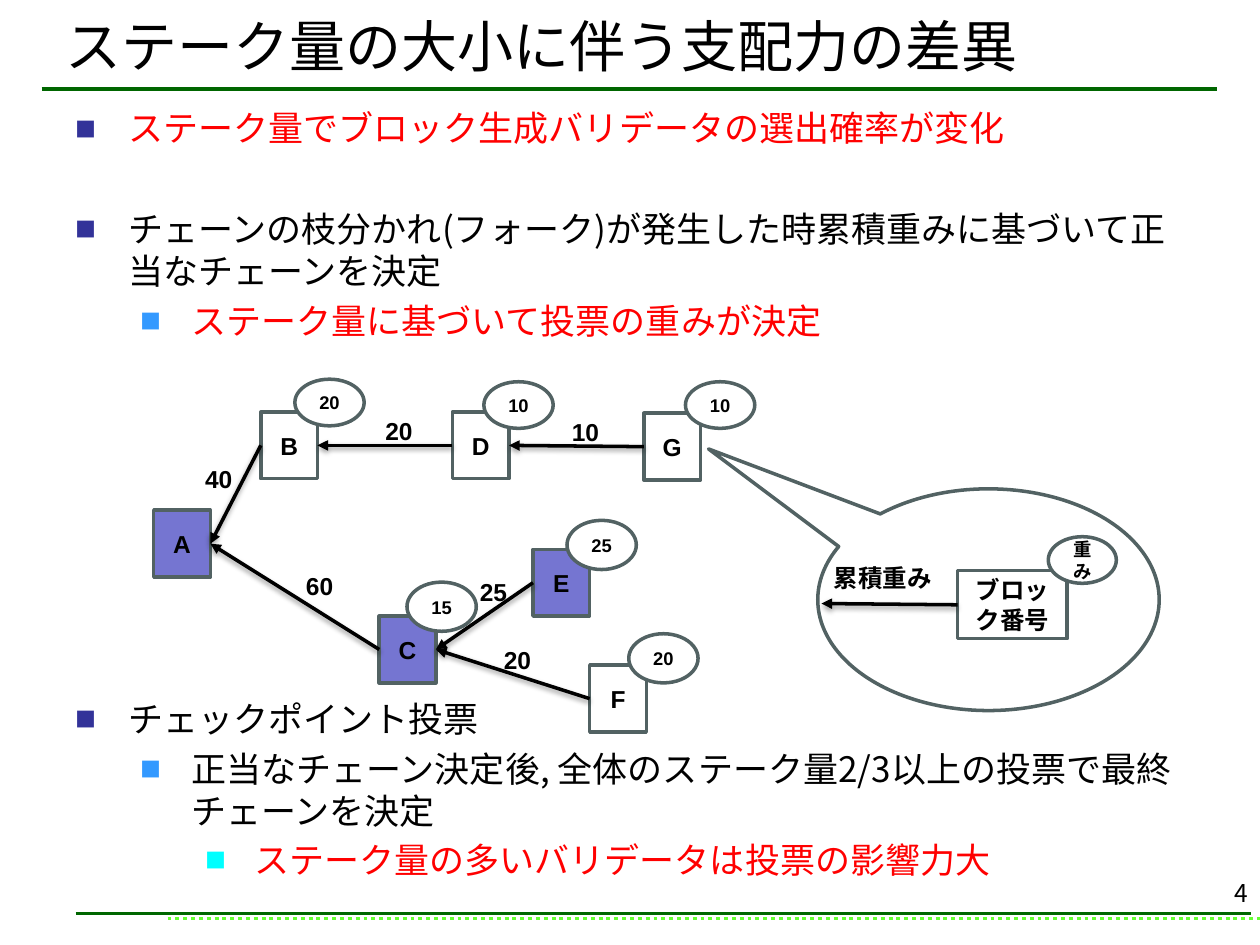
from typing import NamedTuple, Optional

from lxml import etree
from pptx import Presentation
from pptx.dml.color import RGBColor
from pptx.enum.dml import MSO_LINE
from pptx.enum.shapes import MSO_CONNECTOR, MSO_SHAPE
from pptx.enum.text import MSO_ANCHOR, PP_ALIGN
from pptx.oxml.ns import qn
from pptx.util import Inches, Pt

STRAIGHT = MSO_CONNECTOR.STRAIGHT
RECTANGLE, ELLIPSE = MSO_SHAPE.RECTANGLE, MSO_SHAPE.OVAL
CALLOUT = MSO_SHAPE.OVAL_CALLOUT
TOP, MIDDLE = MSO_ANCHOR.TOP, MSO_ANCHOR.MIDDLE
LEFT, CENTER, RIGHT = PP_ALIGN.LEFT, PP_ALIGN.CENTER, PP_ALIGN.RIGHT
DOTTED = MSO_LINE.ROUND_DOT
LEFT_SIDE, RIGHT_SIDE = 1, 3

BLACK = RGBColor(0x00, 0x00, 0x00)
WHITE = RGBColor(0xFF, 0xFF, 0xFF)
RED = RGBColor(0xFF, 0x00, 0x00)
PURPLE = RGBColor(0x75, 0x75, 0xD1)
OUTLINE = RGBColor(0x52, 0x62, 0x63)
GREEN = RGBColor(0x00, 0x66, 0x00)
LIME = RGBColor(0x66, 0xFF, 0x33)

LATIN, JAPANESE = "Arial", "Noto Sans CJK JP"
BODY_LINE = 24
BLANK_TOP, BLANK_SUB = BODY_LINE + 4.8, BODY_LINE + 4.4

presentation = Presentation()
presentation.slide_width, presentation.slide_height = Inches(10), Inches(7.5)
slide = presentation.slides.add_slide(presentation.slide_layouts[6])
COLUMN = presentation.slide_width / 100
ROW = presentation.slide_height / 75


class Box(NamedTuple):
    """Left, top, width and height in grid columns and rows."""
    left: float
    top: float
    width: float
    height: float

    def lengths(self) -> tuple:
        return (round(self.left * COLUMN), round(self.top * ROW),
                round(self.width * COLUMN), round(self.height * ROW))


class Style(NamedTuple):
    size: float
    bold: bool = False
    font: str = LATIN
    align: PP_ALIGN = LEFT
    anchor: MSO_ANCHOR = TOP


class Level(NamedTuple):
    margin: float
    indent: float
    space: float
    bullet: str


class Point(NamedTuple):
    text: str
    level: int
    color: RGBColor
    gap: float = 0


class Block(NamedTuple):
    name: str
    box: Box
    fill: RGBColor
    weight: str
    weight_box: Box


class Label(NamedTuple):
    text: str
    box: Box


TITLE = Style(32, anchor=MIDDLE)
BODY = Style(20, font=JAPANESE)
PAGE = Style(14, font=JAPANESE, align=RIGHT)
BLOCK = Style(14, True, align=CENTER, anchor=MIDDLE)
WEIGHT = Style(10.5, True, align=CENTER, anchor=MIDDLE)
LABEL = Style(14, True)

LEVELS = [Level(0.5, -0.42, 4.8, "333399"),
          Level(1, -0.4, 4.4, "3399FF"),
          Level(1.5, -0.39, 4, "00FFFF")]
POINTS = [
    Point("ステーク量でブロック生成バリデータの選出確率が変化", 0, RED),
    Point("チェーンの枝分かれ(フォーク)が発生した時累積重みに基づいて正当なチェーンを決定",
          0, BLACK, BLANK_TOP),
    Point("ステーク量に基づいて投票の重みが決定", 1, RED),
    Point("チェックポイント投票", 0, BLACK, 7 * BLANK_SUB),
    Point("正当なチェーン決定後, 全体のステーク量2/3以上の投票で最終チェーンを決定", 1, BLACK),
    Point("ステーク量の多いバリデータは投票の影響力大", 2, RED),
]


def block(name: str, left: float, top: float, fill: RGBColor, weight: str = "",
          dx: float = 0, dy: float = 0, height: float = 3.9) -> Block:
    """A chain block; its weight bubble is offset by dx and dy."""
    return Block(name, Box(left, top, 4.5, 5.3), fill, weight,
                 Box(left + dx, top + dy, 5.5, height))


BLOCKS = [
    block("A", 12.2, 40.5, PURPLE),
    block("B", 20.7, 32.7, WHITE, "20", 2.7, -2.6, 3.7),
    block("D", 35.9, 32.7, WHITE, "10", 2.5, -2.4, 3.7),
    block("C", 30.1, 48.9, PURPLE, "15", 2.2, -2.7),
    block("E", 42.3, 43.6, PURPLE, "25", 2.7, -2.3),
    block("F", 46.8, 52.8, WHITE, "20", 3.1, -2.5),
    block("G", 51.1, 32.8, WHITE, "10", 3.3, -2.5, 3.7),
    Block("ブロック番号", Box(76, 45.3, 8.7, 5.4), WHITE, "重み", Box(83.2, 42.6, 5.4, 3.7)),
]
VOTES = ["BA", "DB", "CA", "EC", "FC", "GD"]
LABELS = [
    Label("10", Box(44.4, 32.6, 5.5, 3.4)),
    Label("20", Box(29.6, 32.5, 4.7, 3.4)),
    Label("40", Box(15.3, 36.3, 5.7, 3.4)),
    Label("60", Box(23.3, 44.8, 5.5, 3.4)),
    Label("25", Box(37.1, 45.3, 6.8, 3.4)),
    Label("20", Box(39, 50.7, 5.7, 3.4)),
    Label("累積重み", Box(65.2, 44.2, 10.9, 3.4)),
]


def write(paragraph, text: str, style: Style, color: RGBColor) -> None:
    run = paragraph.add_run()
    run.text = text
    for name, value in {"size": Pt(style.size), "bold": style.bold, "name": style.font}.items():
        setattr(run.font, name, value)
    run.font.color.rgb = color
    east_asian = etree.SubElement(run.font._element, qn("a:ea"))
    east_asian.set("typeface", JAPANESE)
    paragraph.alignment = style.align


def add_text(text: str, box: Box, style: Style):
    shape = slide.shapes.add_textbox(*box.lengths())
    frame = shape.text_frame
    frame.word_wrap, frame.vertical_anchor = True, style.anchor
    if text:
        write(frame.paragraphs[0], text, style, BLACK)
    return shape


def add_outlined(kind: MSO_SHAPE, box: Box, fill: Optional[RGBColor], text: str, style: Style):
    shape = slide.shapes.add_shape(kind, *box.lengths())
    shape.shadow.inherit = False
    if fill is None:
        shape.fill.background()
    else:
        shape.fill.solid()
        shape.fill.fore_color.rgb = fill
    shape.line.color.rgb, shape.line.width = OUTLINE, Pt(2)
    shape.text_frame.vertical_anchor = style.anchor
    if text:
        write(shape.text_frame.paragraphs[0], text, style, BLACK)
    return shape


def add_line(start: tuple, end: tuple, color: RGBColor, width: float):
    points = [round(value * unit) for point in (start, end)
              for value, unit in zip(point, (COLUMN, ROW))]
    line = slide.shapes.add_connector(STRAIGHT, *points)
    line.line.color.rgb, line.line.width = color, Pt(width)
    etree.SubElement(line._element.spPr, qn("a:effectLst"))
    return line


def add_arrow(source, end: tuple = (0, 0), target=None) -> None:
    """Arrow from a block's left side to a target's right side or a free end."""
    arrow = add_line((0, 0), end, BLACK, 2)
    arrow.begin_connect(source, LEFT_SIDE)
    if target is not None:
        arrow.end_connect(target, RIGHT_SIDE)
    etree.SubElement(arrow.line._get_or_add_ln(), qn("a:tailEnd")).set("type", "triangle")
    shadow = etree.SubElement(arrow._element.spPr.find(qn("a:effectLst")), qn("a:outerShdw"),
                              blurRad=str(Pt(3.1)), dist=str(Pt(1.6)), dir="5400000")
    color = etree.SubElement(shadow, qn("a:srgbClr"), val=str(BLACK))
    etree.SubElement(color, qn("a:alpha"), val="38000")


def add_point(paragraph, point: Point, first: bool) -> None:
    level = LEVELS[point.level]
    paragraph.level = point.level
    paragraph.line_spacing = Pt(BODY_LINE)
    paragraph.space_before = Pt(0 if first else level.space + point.gap)
    properties = paragraph._p.get_or_add_pPr()
    properties.set("marL", str(Inches(level.margin)))
    properties.set("indent", str(Inches(level.indent)))
    color = etree.SubElement(properties, qn("a:buClr"))
    etree.SubElement(color, qn("a:srgbClr"), val=level.bullet)
    etree.SubElement(properties, qn("a:buSzPct"), val="60000")
    etree.SubElement(properties, qn("a:buFont"), typeface=JAPANESE)
    etree.SubElement(properties, qn("a:buChar"), char="■")
    write(paragraph, point.text, BODY, point.color)


add_line((13.3, 72.9), (100, 72.9), LIME, 2.25).line.dash_style = DOTTED
add_line((6, 72.5), (99.3, 72.5), GREEN, 2.25)
add_line((3.3, 7.1), (96.6, 7.1), GREEN, 2.25)
add_text("ステーク量の大小に伴う支配力の差異", Box(4.2, 0.7, 85.8, 5.8), TITLE)

body = add_text("", Box(4.2, 8, 91.7, 62), BODY).text_frame
for index, point in enumerate(POINTS):
    add_point(body.add_paragraph() if index else body.paragraphs[0], point, index == 0)
add_text("4", Box(79.2, 69.2, 20.8, 5), PAGE)

shapes = {item.name: add_outlined(RECTANGLE, item.box, item.fill, item.name, BLOCK)
          for item in BLOCKS}
for child, parent in VOTES:
    add_arrow(shapes[child], target=shapes[parent])
add_arrow(shapes["ブロック番号"], end=(65.2, 47.9))
for item in BLOCKS:
    if item.weight:
        add_outlined(ELLIPSE, item.weight_box, WHITE, item.weight, WEIGHT)
for label in LABELS:
    add_text(label.text, label.box, LABEL)
callout = add_outlined(CALLOUT, Box(64.9, 38.8, 27.1, 17.6), None, "", BLOCK)
callout.adjustments[0], callout.adjustments[1] = -0.82, -0.68

presentation.save("out.pptx")
